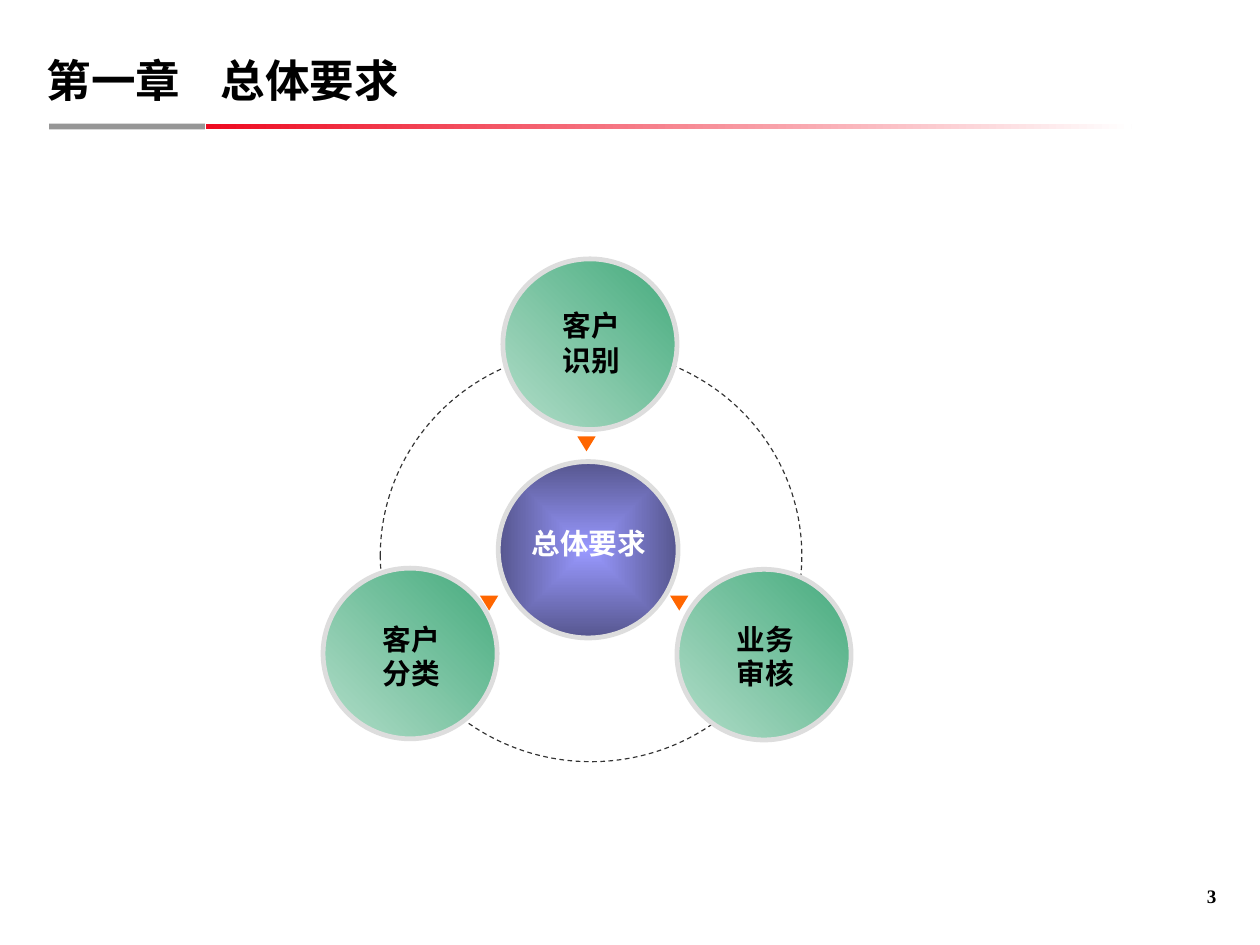
"""Build the chapter slide: three linked circles around a central theme."""
from lxml.etree import SubElement
from pptx import Presentation
from pptx.dml.color import RGBColor
from pptx.enum.dml import MSO_LINE
from pptx.enum.shapes import MSO_SHAPE
from pptx.enum.text import MSO_ANCHOR, PP_ALIGN
from pptx.oxml import parse_xml
from pptx.oxml.ns import nsdecls, qn
from pptx.util import Inches, Pt

SANS = "Noto Sans CJK SC"


def put(frame, text, size=18, font=SANS, color="000000", align=PP_ALIGN.CENTER,
        anchor=MSO_ANCHOR.TOP, inset=None, space=None, wrap=True):
    """Fill a text frame, one paragraph for each line of text."""
    frame.text = text
    frame.word_wrap = wrap
    frame.vertical_anchor = anchor
    if inset is not None:
        frame.margin_left = frame.margin_right = Inches(inset)
        frame.margin_top = frame.margin_bottom = Inches(inset)
    for para in frame.paragraphs:
        para.alignment = align
        para.line_spacing = space
        for run in para.runs:
            run.font.size = Pt(size)
            run.font.bold = True
            run.font.name = font
            run.font.color.rgb = RGBColor.from_string(color)
            east = SubElement(run.font._element, qn("a:ea"))
            east.set("typeface", SANS if font == "Arial" else font)


def draw(kind, box, fill=None, angle=0, line=None, width=3):
    """Add a shape whose fill is a colour, a pair of colours or nothing."""
    shape = slide.shapes.add_shape(kind, *[Inches(n) for n in box])
    shape.shadow.inherit = False
    if fill is None:
        shape.fill.background()
    elif isinstance(fill, str):
        shape.fill.solid()
        shape.fill.fore_color.rgb = RGBColor.from_string(fill)
    else:
        shape.fill.gradient()
        shape.fill.gradient_angle = angle
        for stop, tone in zip(shape.fill.gradient_stops, fill):
            stop.color.rgb = RGBColor.from_string(tone)
    if line:
        shape.line.color.rgb = RGBColor.from_string(line)
        shape.line.width = Pt(width)
    else:
        shape.line.fill.background()
    return shape


deck = Presentation()
deck.slide_width, deck.slide_height = Inches(11), Inches(8.25)
slide = deck.slides.add_slide(deck.slide_layouts[5])

title = slide.shapes.title
title.left, title.top = Inches(0.41), Inches(0.33)
title.width, title.height = Inches(8.71), Inches(0.6)
put(title.text_frame, "第一章    总体要求", size=28, align=PP_ALIGN.LEFT,
    anchor=MSO_ANCHOR.BOTTOM, inset=0, space=0.85)

draw(MSO_SHAPE.RECTANGLE, (0.43, 1.08, 1.36, 0.05), "969696")
draw(MSO_SHAPE.RECTANGLE, (1.8, 1.08, 8.08, 0.05), ("EE0A20", "FFFFFF"))

page = slide.shapes.add_textbox(Inches(10.17), Inches(7.5), Inches(0.45), Inches(0.42))
put(page.text_frame, "3", size=12, font="Times New Roman", align=PP_ALIGN.RIGHT,
    anchor=MSO_ANCHOR.BOTTOM, inset=0, wrap=False)

ring = draw(MSO_SHAPE.OVAL, (3.32, 3.05, 3.68, 3.6), line="333333", width=0.75)
ring.line.dash_style = MSO_LINE.DASH

core = draw(MSO_SHAPE.OVAL, (4.35, 4.03, 1.57, 1.54), ("9999FF", "56568E"), line="DDDDDD")
grad = core._element.spPr.find(qn("a:gradFill"))
grad.replace(grad.find(qn("a:lin")), parse_xml(
    f'<a:path {nsdecls("a")} path="shape">'
    '<a:fillToRect l="50000" t="50000" r="50000" b="50000"/></a:path>'))

for left, top in ((5.04, 3.81), (4.19, 5.2), (5.85, 5.2)):
    mark = draw(MSO_SHAPE.ISOSCELES_TRIANGLE, (left, top, 0.16, 0.13), "FF6600")
    mark.rotation = 180

label = slide.shapes.add_textbox(Inches(4.19), Inches(4.54), Inches(1.9), Inches(0.41))
put(label.text_frame, "总体要求", font="Arial", color="FFFFFF")

for left, top, drop, text in ((2.82, 4.96, 0.42, "客户\n分类"),
                              (4.39, 2.26, 0.38, "客户\n识别"),
                              (5.91, 4.97, 0.41, "业务\n审核")):
    draw(MSO_SHAPE.OVAL, (left, top, 1.52, 1.49), ("B2DDC9", "45AB7D"), 45, "DDDDDD")
    label = slide.shapes.add_textbox(Inches(left + 0.23), Inches(top + drop),
                                     Inches(1.08), Inches(0.72))
    put(label.text_frame, text)

deck.save("out.pptx")
